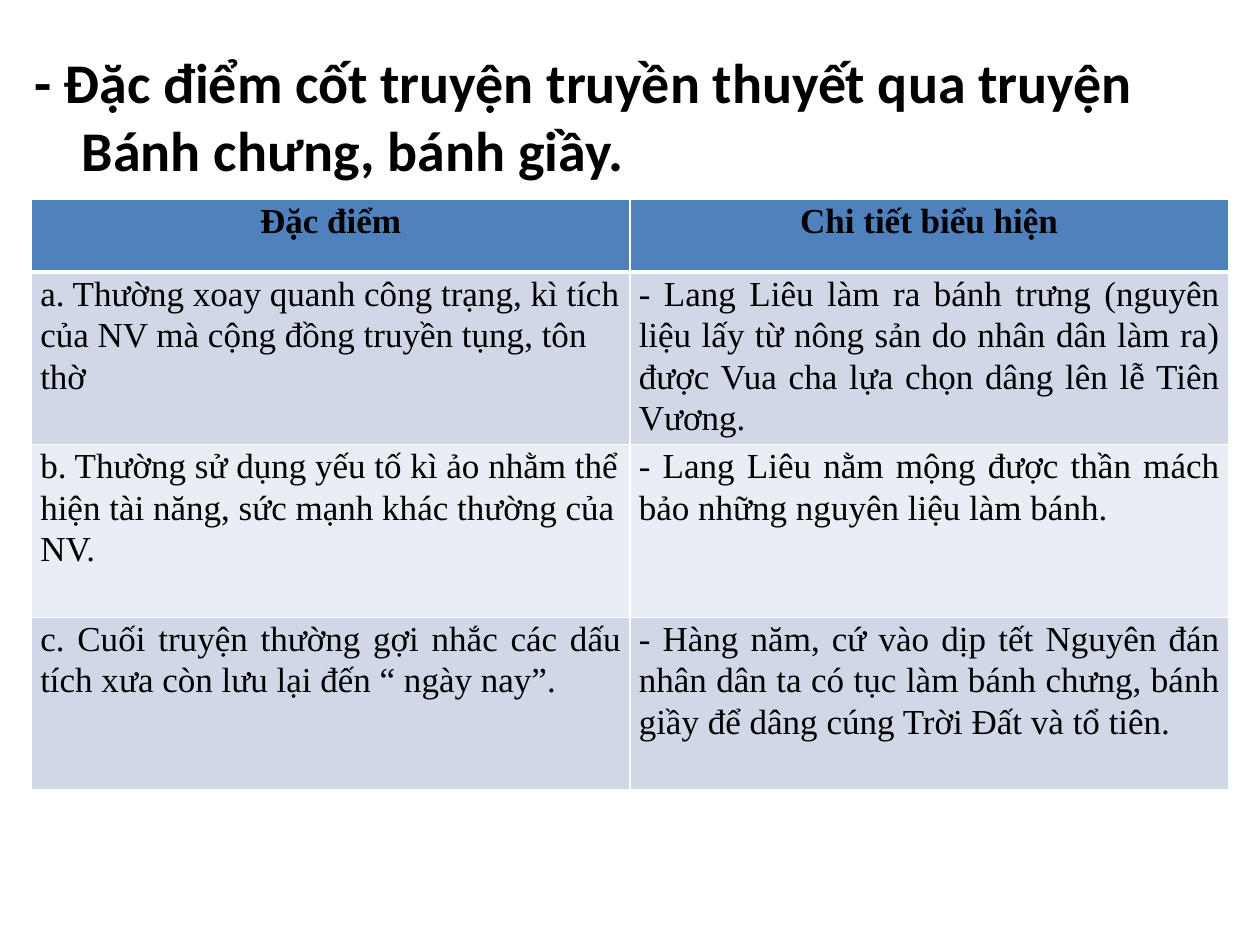
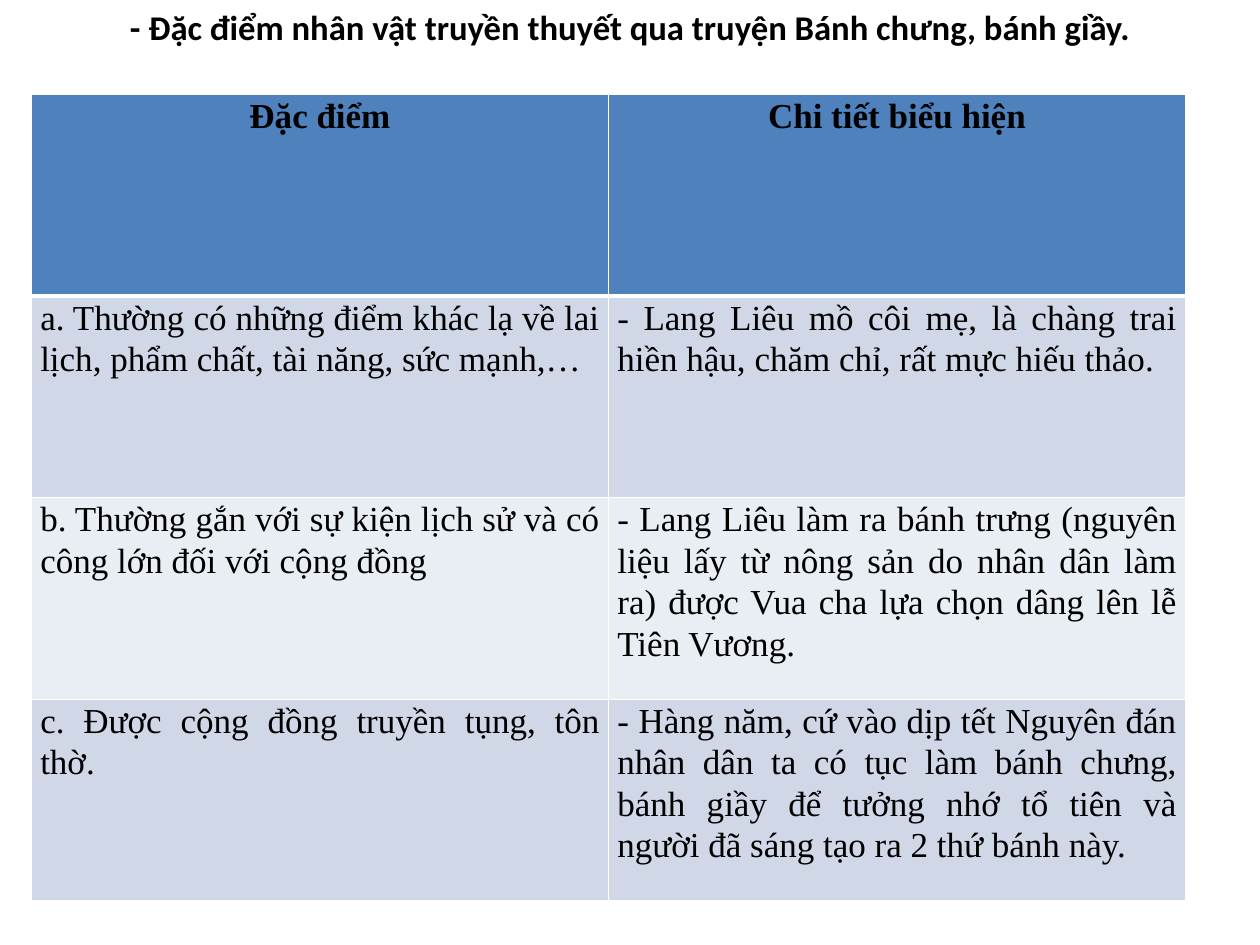
from lxml import etree
from pptx import Presentation
from pptx import util as u
from pptx.dml.color import RGBColor
from pptx.enum import text
from pptx.oxml import ns

WIDTH, HEIGHT = 10, 7.5
BLACK, WHITE = "000000", "FFFFFF"
HEADER_FILL, BAND_FILLS = "4F81BD", ("D0D8E8", "E9EDF4")
HEADING_FONT, TABLE_FONT = "Calibri", "Times New Roman"
LEFT, CENTER, JUSTIFY = (
    text.PP_ALIGN.LEFT, text.PP_ALIGN.CENTER, text.PP_ALIGN.JUSTIFY)
HEADERS = ("Đặc điểm", "Chi tiết biểu hiện")
TABLE_LEFT = 0.25

PLOT_ROWS = (
    ("a. Thường xoay quanh công trạng, kì tích của NV mà cộng đồng truyền tụng, tôn thờ",
     "- Lang Liêu làm ra bánh trưng (nguyên liệu lấy từ nông sản do nhân dân làm ra) "
     "được Vua cha lựa chọn dâng lên lễ Tiên Vương."),
    ("b. Thường sử dụng yếu tố kì ảo nhằm thể hiện tài năng, sức mạnh khác thường của NV.",
     "- Lang Liêu nằm mộng được thần mách bảo những nguyên liệu làm bánh."),
    ("c. Cuối truyện thường gợi nhắc các dấu tích xưa còn lưu lại đến “ ngày nay”.",
     "- Hàng năm, cứ vào dịp tết Nguyên đán nhân dân ta có tục làm bánh chưng, "
     "bánh giầy để dâng cúng Trời Đất và tổ tiên."),
)
CHARACTER_ROWS = (
    ("a. Thường có những điểm khác lạ về lai lịch, phẩm chất, tài năng, sức mạnh,…",
     "- Lang Liêu mồ côi mẹ, là chàng trai hiền hậu, chăm chỉ, rất mực hiếu thảo."),
    ("b. Thường gắn với sự kiện lịch sử và có công lớn đối với cộng đồng",
     PLOT_ROWS[0][1]),
    ("c. Được cộng đồng truyền tụng, tôn thờ.",
     "- Hàng năm, cứ vào dịp tết Nguyên đán nhân dân ta có tục làm bánh chưng, "
     "bánh giầy để tưởng nhớ tổ tiên và người đã sáng tạo ra 2 thứ bánh này."),
)


def rgb(color):
    return RGBColor.from_string(color)


def set_all(obj, values):
    for name, value in values.items():
        setattr(obj, name, value)


def write(p, words, font, size, bold, **layout):
    """Fill a paragraph with one formatted run."""
    set_all(p, layout)
    r = p.add_run()
    r.text = words
    set_all(r.font, {"name": font, "size": u.Pt(size), "bold": bold})
    r.font.color.rgb = rgb(BLACK)


def place(sp, left, top, width, height):
    set_all(sp, {"left": u.Inches(left), "top": u.Inches(top),
                 "width": u.Inches(width), "height": u.Inches(height)})


def add_hanging_heading(slide, words):
    """Put the heading in the body placeholder, without a bullet."""
    title = slide.shapes.title.element
    title.getparent().remove(title)
    sp = slide.placeholders[1]
    place(sp, 0.17, 0.33, 9.25, 6.83)
    p = sp.text_frame.paragraphs[0]
    pPr = p._p.get_or_add_pPr()
    indent = u.Inches(0.38)
    pPr.set("marL", str(indent))
    pPr.set("indent", str(-indent))
    etree.SubElement(pPr, ns.qn("a:buNone"))
    write(p, words, HEADING_FONT, 32, True, space_before=u.Pt(0))


def add_title(slide, words):
    sp = slide.shapes.title
    place(sp, 0.5, 0.04, WIDTH - 1, 0.34)
    tf = sp.text_frame
    set_all(tf, {"margin_top": 0, "margin_bottom": 0, "word_wrap": True,
                 "vertical_anchor": text.MSO_ANCHOR.MIDDLE})
    write(tf.paragraphs[0], words, HEADING_FONT, 19.8, True, alignment=CENTER)


def set_borders(cell, bottom):
    tcPr = cell._tc.get_or_add_tcPr()
    sides = (("L", 1), ("R", 1), ("T", 1), ("B", bottom))
    for i, (side, points) in enumerate(sides):
        ln = etree.Element(ns.qn(f"a:ln{side}"), w=str(u.Pt(points)))
        fill = etree.SubElement(ln, ns.qn("a:solidFill"))
        etree.SubElement(fill, ns.qn("a:srgbClr"), val=WHITE)
        tcPr.insert(i, ln)


def format_cell(cell, words, fill, align, header):
    margin = u.Inches(0.07)
    set_all(cell, {"margin_left": margin, "margin_right": margin,
                   "margin_top": 0, "margin_bottom": 0})
    cell.fill.solid()
    cell.fill.fore_color.rgb = rgb(fill)
    set_borders(cell, 3 if header else 1)
    write(cell.text_frame.paragraphs[0], words, TABLE_FONT, 20, header,
          alignment=align, line_spacing=1.07, space_after=u.Pt(8))


def add_feature_table(slide, rows, top, col_width, header_height, row_height,
                      left_aligned=()):
    """Add a banded table; left_aligned lists (row, column) cells not justified."""
    lines = (HEADERS, *rows)
    heights = [header_height] + [row_height] * len(rows)
    table = slide.shapes.add_table(
        len(lines), len(HEADERS), u.Inches(TABLE_LEFT), u.Inches(top),
        u.Inches(col_width * len(HEADERS)), u.Inches(sum(heights))).table
    for col in table.columns:
        col.width = u.Inches(col_width)
    for i, (line, height) in enumerate(zip(lines, heights)):
        table.rows[i].height = u.Inches(height)
        header = i == 0
        fill = HEADER_FILL if header else BAND_FILLS[(i - 1) % 2]
        for j, words in enumerate(line):
            align = (CENTER if header
                     else LEFT if (i, j) in left_aligned else JUSTIFY)
            format_cell(table.cell(i, j), words, fill, align, header)


def main():
    prs = Presentation()
    set_all(prs, {"slide_width": u.Inches(WIDTH),
                  "slide_height": u.Inches(HEIGHT)})
    content, title_only = prs.slide_layouts[1], prs.slide_layouts[5]

    plot = prs.slides.add_slide(content)
    add_hanging_heading(
        plot, "- Đặc điểm cốt truyện truyền thuyết qua truyện Bánh chưng, bánh giầy.")
    add_feature_table(plot, PLOT_ROWS, 1.58, 4.75, 0.58, 1.37,
                      left_aligned=((1, 0), (2, 0)))

    character = prs.slides.add_slide(title_only)
    add_title(
        character, "- Đặc điểm nhân vật truyền thuyết qua truyện Bánh chưng, bánh giầy.")
    add_feature_table(character, CHARACTER_ROWS, 0.75, 4.58, 1.6, 1.6)

    prs.save("out.pptx")


if __name__ == "__main__":
    main()
